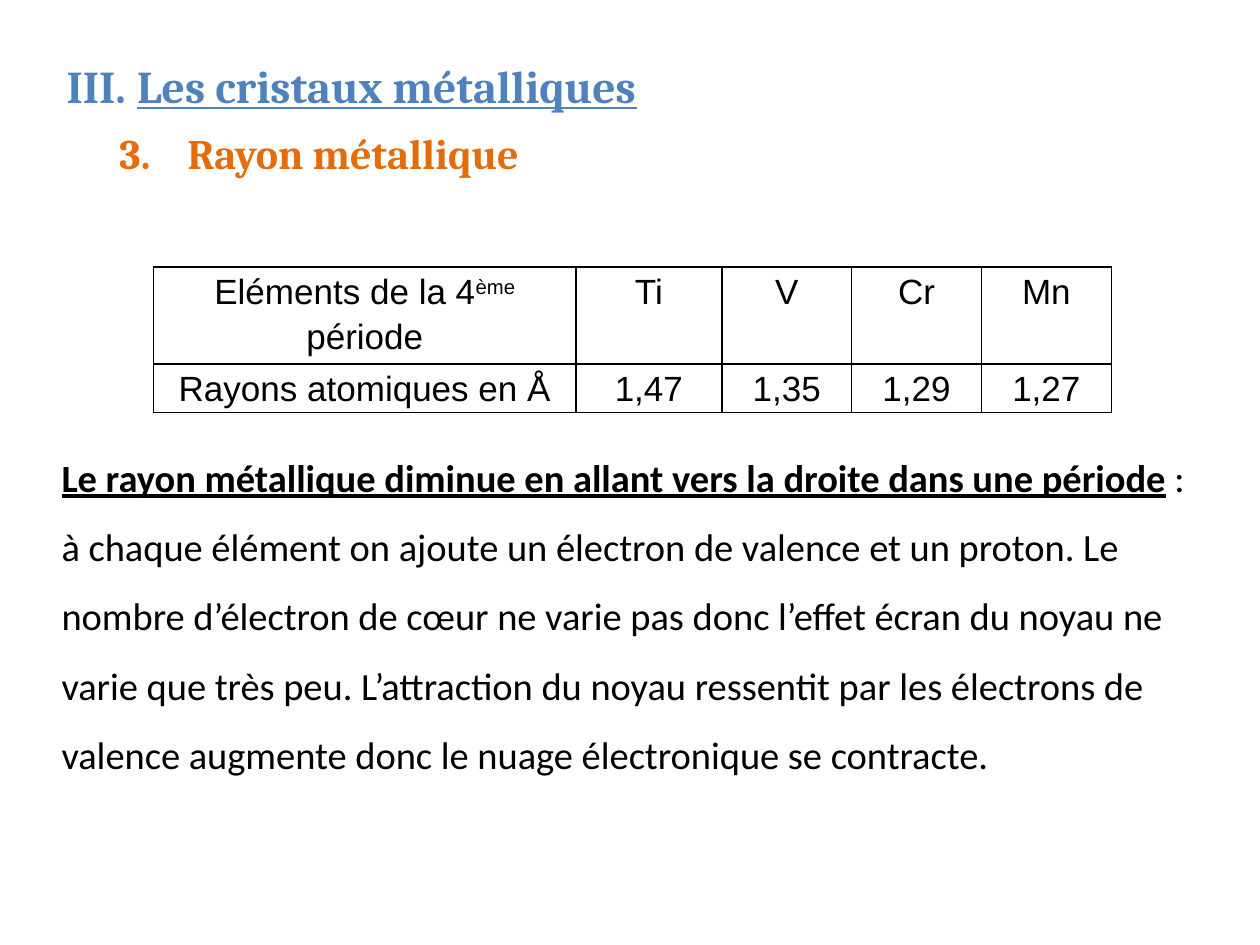
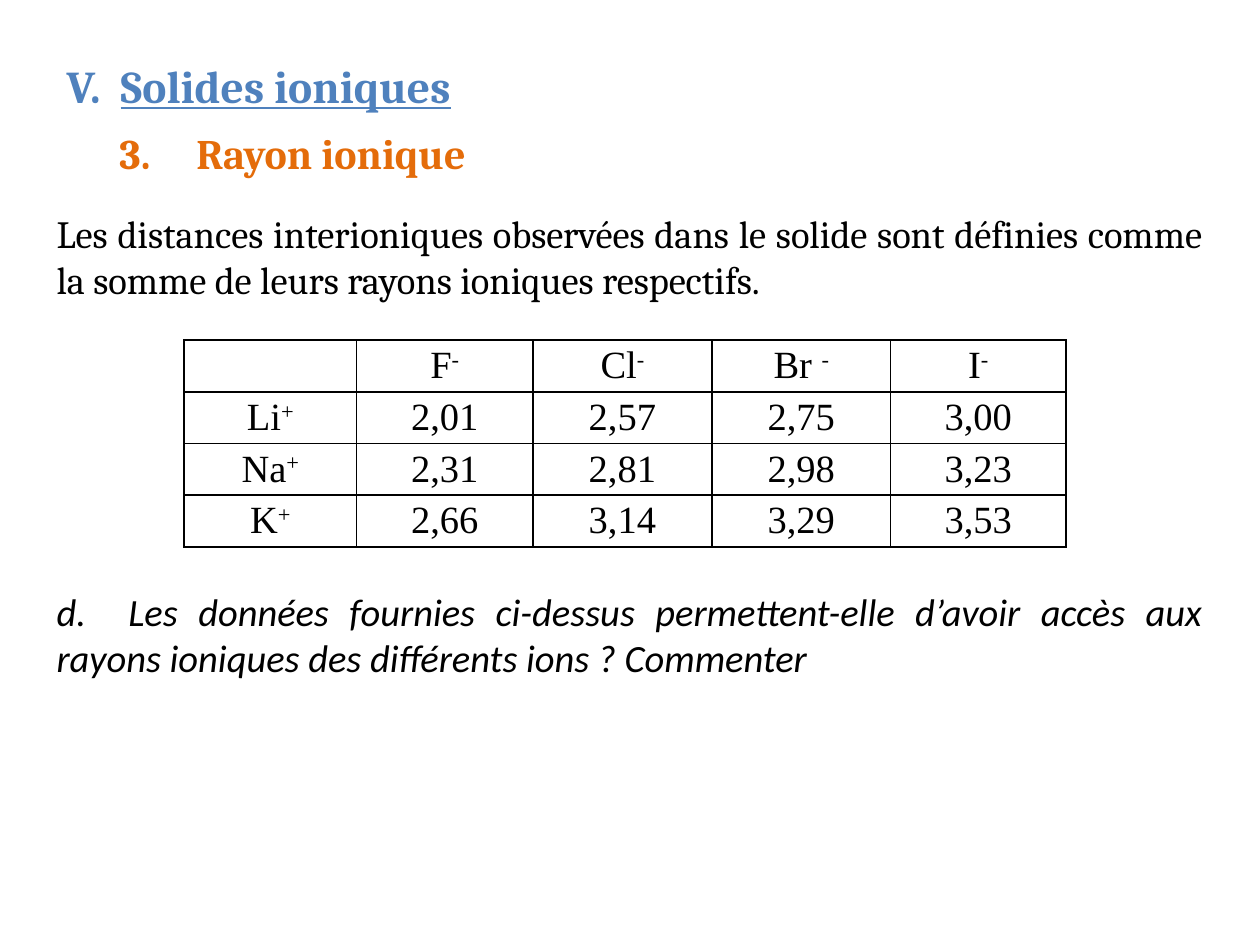
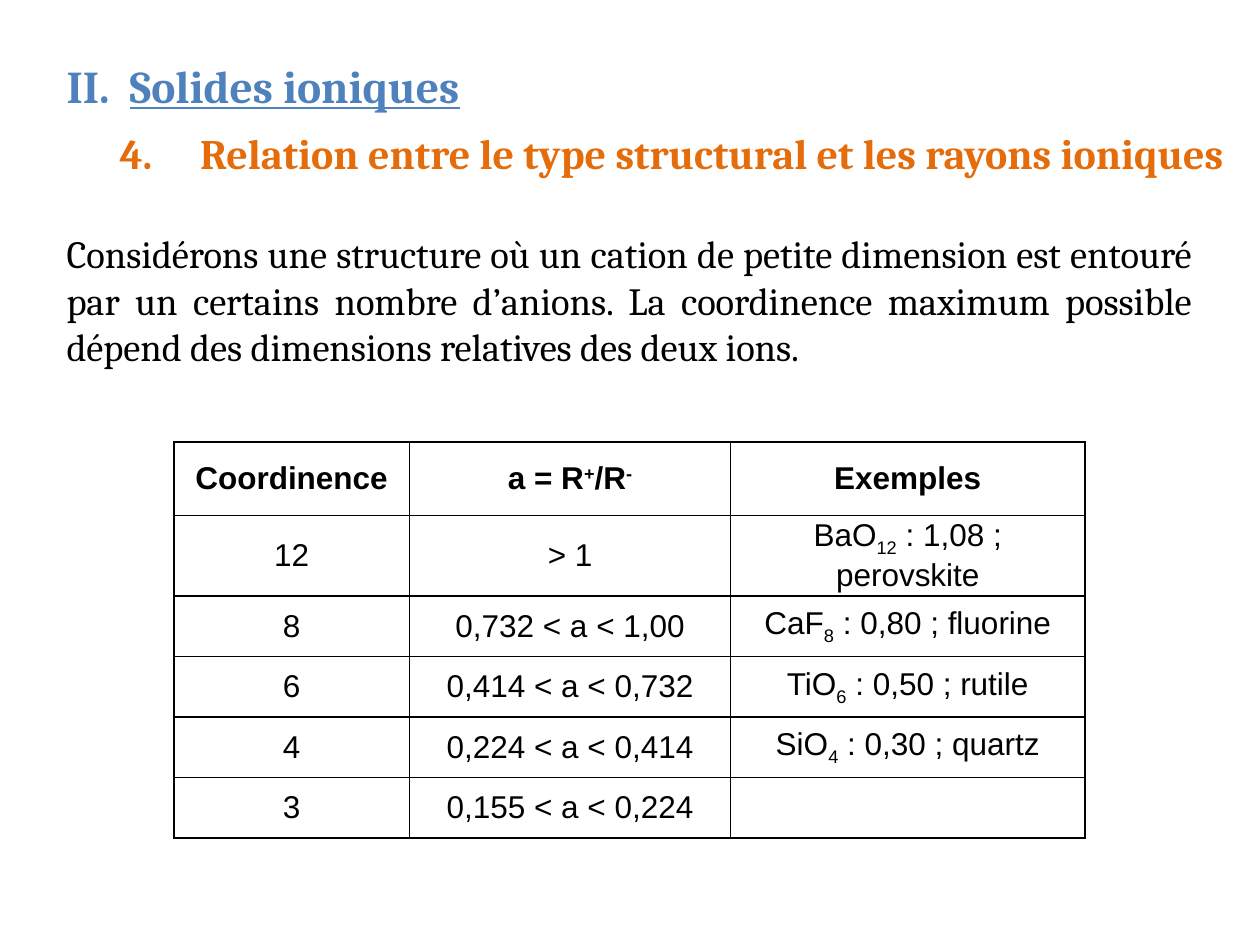
from dataclasses import dataclass

from lxml import etree
from pptx import Presentation
from pptx.dml.color import RGBColor as RGB
from pptx.enum.text import MSO_ANCHOR as Anchor, MSO_AUTO_SIZE as Auto, PP_ALIGN as Align
from pptx.oxml.ns import qn
from pptx.util import Inches, Pt


@dataclass(frozen=True)
class Theme:
    black: str = "000000"
    blue: str = "4F81BD"
    orange: str = "E46C0A"
    serif: str = "Cambria"
    sans: str = "Calibri"
    title: int = 26
    sub: int = 24
    body: int = 22
    edge: int = 1


THEME = Theme()
BASES = {"^": "30000", "_": "-25000"}


def style(run, size, face, color=THEME.black, bold=False, italic=False, under=False):
    font = run.font
    font.size, font.name = Pt(size), face
    font.color.rgb = RGB.from_string(color)
    font.bold, font.italic, font.underline = bold, italic, under


def add_text(slide, box, parts, align=Align.LEFT, space=None):
    """Write (text, style) parts as one paragraph, and return it."""
    frame = slide.shapes.add_textbox(*map(Inches, box)).text_frame
    frame.word_wrap = True
    frame.auto_size = Auto.SHAPE_TO_FIT_TEXT
    para = frame.paragraphs[0]
    para.alignment, para.line_spacing = align, space
    for text, look in parts:
        run = para.add_run()
        run.text = text
        style(run, **look)
    return para


def hang(para, left, first):
    """Start the number at first and the words after the tab at left."""
    props = para._p.get_or_add_pPr()
    props.set("marL", str(Inches(left)))
    props.set("indent", str(Inches(first - left)))


def add_tab(para, pos):
    tabs = etree.SubElement(para._p.get_or_add_pPr(), qn("a:tabLst"))
    etree.SubElement(tabs, qn("a:tab"), pos=str(Inches(pos)), algn="l")


def add_head(slide, title, sub, width=9.06):
    """Add both heading lines; each is (number, words, offset of words)."""
    look = dict(size=THEME.title, face=THEME.serif, color=THEME.blue, bold=True)
    num, words, left = title
    para = add_text(slide, (0.43, 0.41, 9.06, 0.55),
                    [(num + "\t", look), (words, look | {"under": True})])
    hang(para, left, 0)

    look |= {"size": THEME.sub, "color": THEME.orange}
    num, words, left = sub
    para = add_text(slide, (0.35, 0.96, width, 0.5), [(f"{num}\t{words}", look)])
    hang(para, left, 0.5)


def add_edges(cell):
    props = cell._tc.get_or_add_tcPr()
    for i, side in enumerate(("lnL", "lnR", "lnT", "lnB")):
        line = etree.Element(qn("a:" + side), w=str(Pt(THEME.edge)))
        fill = etree.SubElement(line, qn("a:solidFill"))
        etree.SubElement(fill, qn("a:srgbClr"), val=THEME.black)
        props.insert(i, line)


def fill_cell(cell, text, look, anchor, space):
    """Write the text; ^ encloses a superscript and _ a subscript."""
    cell.fill.background()
    add_edges(cell)
    cell.margin_left = cell.margin_right = Inches(0.07)
    cell.margin_top = cell.margin_bottom = 0
    cell.vertical_anchor = anchor
    para = cell.text_frame.paragraphs[0]
    para.alignment, para.line_spacing = Align.CENTER, space
    mark = "_" if "_" in text else "^"
    for i, part in enumerate(text.split(mark)):
        if part:
            run = para.add_run()
            run.text = part
            style(run, **look)
            if i % 2:
                run._r.get_or_add_rPr().set("baseline", BASES[mark])


def add_grid(slide, spot, cols, rows, cells, size, face,
             anchor=Anchor.MIDDLE, space=None, header=False):
    box = (*spot, sum(cols), sum(rows))
    table = slide.shapes.add_table(len(rows), len(cols), *map(Inches, box)).table
    table.first_row = table.horz_banding = False
    for col, width in zip(table.columns, cols):
        col.width = Inches(width)
    for r, (row, height, texts) in enumerate(zip(table.rows, rows, cells)):
        row.height = Inches(height)
        look = dict(size=size, face=face, bold=header and r == 0)
        for cell, text in zip(row.cells, texts):
            fill_cell(cell, text, look, anchor, space)


def metal_slide(slide):
    add_head(slide, ("III.", "Les cristaux métalliques", 0.56),
             ("3.", "Rayon métallique", 1.04))
    cells = [
        ("Eléments de la 4^ème^ période", "Ti", "V", "Cr", "Mn"),
        ("Rayons atomiques en Å", "1,47", "1,35", "1,29", "1,27"),
    ]
    add_grid(slide, (1.22, 2.12), (3.35, 1.16, 1.03, 1.03, 1.03), (0.77, 0.38),
             cells, 20, "Arial", Anchor.TOP, 1.15)
    look = dict(size=THEME.body, face=THEME.sans)
    add_text(slide, (0.39, 3.37, 9.23, 2.82), [
        ("Le rayon métallique diminue en allant vers la droite dans une période",
         look | {"bold": True, "under": True}),
        (" : à chaque élément on ajoute un électron de valence et un proton. "
         "Le nombre d’électron de cœur ne varie pas donc l’effet écran du noyau "
         "ne varie que très peu. L’attraction du noyau ressentit par les électrons "
         "de valence augmente donc le nuage électronique se contracte.", look),
    ], space=1.5)


def ion_slide(slide):
    add_head(slide, ("V.", "Solides ioniques", 0.43), ("3.", "Rayon ionique", 1.11))
    add_text(slide, (0.35, 1.62, 9.29, 0.84), [
        ("Les distances interioniques observées dans le solide sont définies comme "
         "la somme de leurs rayons ioniques respectifs.",
         dict(size=THEME.body, face=THEME.serif)),
    ], Align.JUSTIFY)
    cells = [
        ("", "F^-^", "Cl^-^", "Br ^-^", "I^-^"),
        ("Li^+^", "2,01", "2,57", "2,75", "3,00"),
        ("Na^+^", "2,31", "2,81", "2,98", "3,23"),
        ("K^+^", "2,66", "3,14", "3,29", "3,53"),
    ]
    add_grid(slide, (1.46, 2.7), (1.37, 1.4, 1.42, 1.42, 1.39), [0.41] * 4,
             cells, THEME.body, "Times New Roman")
    para = add_text(slide, (0.35, 4.62, 9.29, 0.84), [
        ("d.\tLes données fournies ci-dessus permettent-elle d’avoir accès aux "
         "rayons ioniques des différents ions ? Commenter",
         dict(size=THEME.body, face=THEME.sans, italic=True)),
    ], Align.JUSTIFY)
    add_tab(para, 0.57)


def ratio_slide(slide):
    add_head(slide, ("II.", "Solides ioniques", 0.5),
             ("4.", "Relation entre le type structural et les rayons ioniques", 1.14), 9.65)
    cells = [
        ("Coordinence", "a = R^+^/R^-^", "Exemples"),
        ("12", "> 1", "BaO_12_ : 1,08 ; perovskite"),
        ("8", "0,732 < a < 1,00", "CaF_8_ : 0,80 ; fluorine"),
        ("6", "0,414 < a < 0,732", "TiO_6_ : 0,50 ; rutile"),
        ("4", "0,224 < a < 0,414", "SiO_4_ : 0,30 ; quartz"),
        ("3", "0,155 < a < 0,224", ""),
    ]
    add_grid(slide, (1.38, 3.51), (1.87, 2.55, 2.81), [0.58, 0.64] + [0.48] * 4,
             cells, 18, "Arial", header=True)
    add_text(slide, (0.43, 1.78, 9.13, 1.21), [
        ("Considérons une structure où un cation de petite dimension est entouré "
         "par un certains nombre d’anions. La coordinence maximum possible dépend "
         "des dimensions relatives des deux ions.",
         dict(size=THEME.body, face=THEME.serif)),
    ], Align.JUSTIFY)


def main():
    deck = Presentation()
    deck.slide_width, deck.slide_height = Inches(10), Inches(7.5)
    for build in (metal_slide, ion_slide, ratio_slide):
        build(deck.slides.add_slide(deck.slide_layouts[6]))
    deck.save("out.pptx")


if __name__ == "__main__":
    main()
